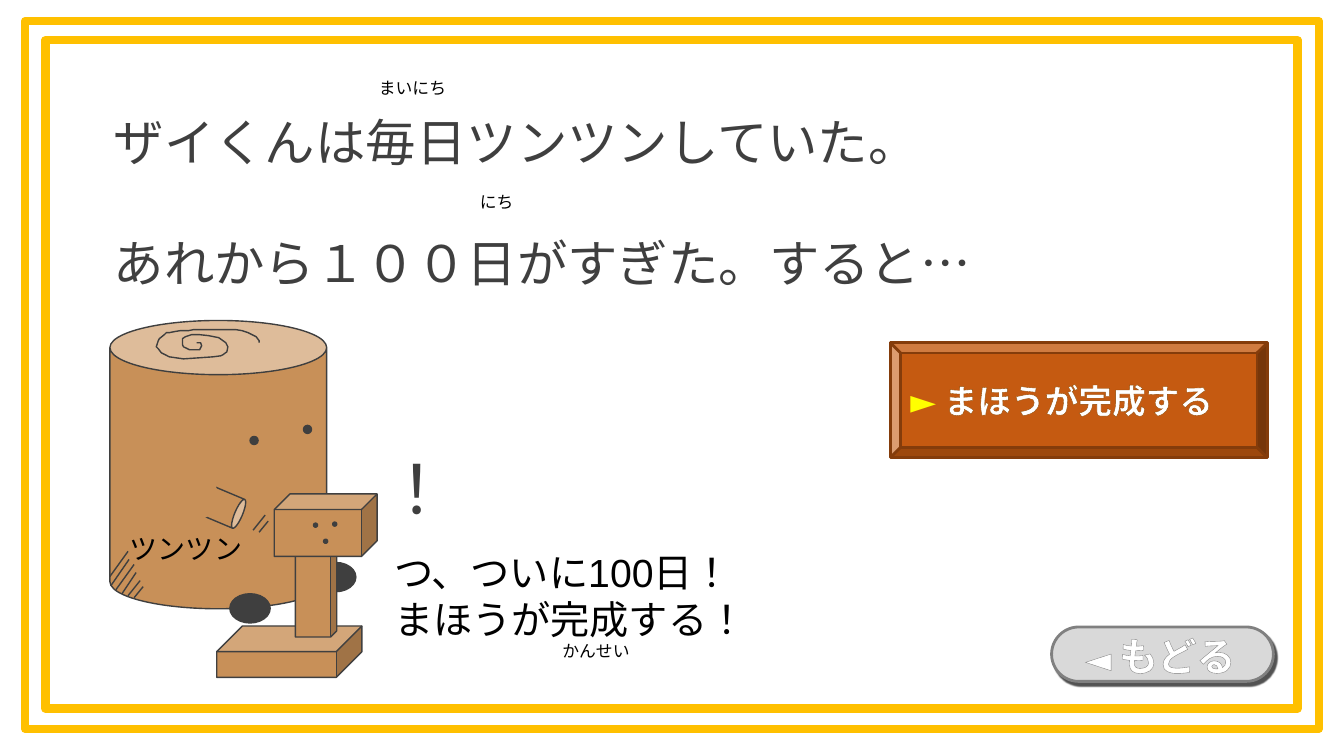
"""Build the storybook slide about Zai-kun reaching day 100."""
from lxml import etree
from pptx import Presentation
from pptx.dml.color import RGBColor
from pptx.enum.lang import MSO_LANGUAGE_ID
from pptx.enum.shapes import MSO_CONNECTOR, MSO_SHAPE
from pptx.enum.text import MSO_ANCHOR, MSO_AUTO_SIZE, PP_ALIGN
from pptx.oxml.ns import qn
from pptx.util import Inches, Pt

RECT, ROUND_RECT = MSO_SHAPE.RECTANGLE, MSO_SHAPE.ROUNDED_RECTANGLE
ELLIPSE, CAN, CUBE, BEVEL = MSO_SHAPE.OVAL, MSO_SHAPE.CAN, MSO_SHAPE.CUBE, MSO_SHAPE.BEVEL
STRAIGHT = MSO_CONNECTOR.STRAIGHT
LEFT, CENTER = PP_ALIGN.LEFT, PP_ALIGN.CENTER
MIDDLE = MSO_ANCHOR.MIDDLE
FIT_SHAPE = MSO_AUTO_SIZE.SHAPE_TO_FIT_TEXT
JAPANESE = MSO_LANGUAGE_ID.JAPANESE

BLACK = RGBColor(0x00, 0x00, 0x00)
WHITE = RGBColor(0xFF, 0xFF, 0xFF)
YELLOW = RGBColor(0xFF, 0xFF, 0x00)
GOLD = RGBColor(0xFF, 0xC0, 0x00)
DARK = RGBColor(0x3F, 0x3F, 0x3F)
EDGE = RGBColor(0x40, 0x40, 0x40)
WOOD = RGBColor(0xC8, 0x90, 0x58)
BRICK = RGBColor(0xC5, 0x5A, 0x11)
BRICK_EDGE = RGBColor(0x84, 0x3C, 0x0B)
BRICK_OUTLINE = RGBColor(0x8E, 0x47, 0x00)
SILVER = RGBColor(0xD9, 0xD9, 0xD9)
GRAY = RGBColor(0x80, 0x80, 0x80)

LATIN_FONT, JAPANESE_FONT = "Arial", "Noto Sans CJK JP"

HATCHING = [
    (1.27, 5.47, 1.09, 5.72), (1.28, 5.55, 1.1, 5.81), (1.33, 5.6, 1.15, 5.85),
    (1.35, 5.68, 1.21, 5.89), (1.39, 5.76, 1.27, 5.91), (1.42, 5.82, 1.33, 5.93),
]
POKE_MARKS = [(2.63, 5.11, 2.51, 5.26), (2.66, 5.17, 2.57, 5.28)]
TREE_RING = [
    (1.95, 3.4), (1.99, 3.4), (2, 3.43), (1.98, 3.47), (1.88, 3.47), (1.82, 3.44),
    (1.81, 3.42), (1.81, 3.36), (1.84, 3.34), (1.9, 3.32), (1.98, 3.32), (2.07, 3.33),
    (2.17, 3.35), (2.24, 3.4), (2.26, 3.44), (2.25, 3.49), (2.21, 3.52), (2.19, 3.53),
    (2.11, 3.54), (1.97, 3.55), (1.82, 3.56), (1.68, 3.54), (1.62, 3.51), (1.6, 3.5),
    (1.57, 3.46), (1.55, 3.44), (1.57, 3.38), (1.58, 3.36), (1.63, 3.32), (1.65, 3.3),
    (1.68, 3.3), (1.73, 3.29), (1.79, 3.28), (1.87, 3.28), (1.92, 3.27), (2.06, 3.27),
    (2.34, 3.27), (2.4, 3.28), (2.46, 3.3), (2.48, 3.31), (2.54, 3.34), (2.57, 3.38),
    (2.57, 3.4),
]


class StorySlide:
    """Draw styled elements on one slide."""

    def __init__(self, prs):
        self.s = prs.slides.add_slide(prs.slide_layouts[6])
        self.target = self.s.shapes

    def group(self):
        self.target = self.s.shapes.add_group_shape().shapes

    def ungroup(self):
        self.target = self.s.shapes

    def paint(self, sp, fill, line, width):
        sp.shadow.inherit = False
        if fill is None:
            sp.fill.background()
        else:
            sp.fill.solid()
            sp.fill.fore_color.rgb = fill
        if line is None:
            sp.line.fill.background()
        else:
            sp.line.color.rgb = line
            sp.line.width = Pt(width)

    def shape(self, kind, box, fill=None, line=None, width=1, adj=None, rotation=0):
        sp = self.target.add_shape(kind, *map(Inches, box))
        self.paint(sp, fill, line, width)
        if adj is not None:
            sp.adjustments[0] = adj
        sp.rotation = rotation
        return sp

    def dot(self, left, top, width, height, rotation=0):
        self.shape(ELLIPSE, (left, top, width, height), DARK, DARK, rotation=rotation)

    def line(self, *ends):
        cxn = self.target.add_connector(STRAIGHT, *map(Inches, ends))
        cxn.line.color.rgb = DARK
        cxn.line.width = Pt(1)
        etree.SubElement(cxn._element.spPr, qn("a:effectLst"))

    def curve(self, points):
        start, *rest = [(Inches(x), Inches(y)) for x, y in points]
        builder = self.target.build_freeform(*start)
        builder.add_line_segments(rest, close=False)
        self.paint(builder.convert_to_shape(), None, DARK, 1)

    def style(self, r, size, color, font=LATIN_FONT, bold=False):
        r.font.size = Pt(size)
        r.font.name = font
        r.font.bold = bold
        r.font.color.rgb = color
        r.font.language_id = JAPANESE
        ea = etree.Element(qn("a:ea"), typeface=JAPANESE_FONT)
        r.font._element.find(qn("a:latin")).addnext(ea)

    def text(self, box, lines, size, color=BLACK, spacing=None):
        tf = self.target.add_textbox(*map(Inches, box)).text_frame
        tf.word_wrap = True
        tf.auto_size = FIT_SHAPE
        tf.text = "\n".join(lines)
        for p in tf.paragraphs:
            p.line_spacing = spacing
            for r in p.runs:
                self.style(r, size, color)

    def label(self, sp, runs, align):
        """Fill a button with bold outlined runs."""
        tf = sp.text_frame
        tf.word_wrap = True
        p = tf.paragraphs[0]
        p.alignment = align
        for text, size, color, outline, width in runs:
            r = p.add_run()
            r.text = text
            self.style(r, size, color, JAPANESE_FONT, True)
            ln = etree.Element(qn("a:ln"), w=str(Pt(width)))
            fill = etree.SubElement(ln, qn("a:solidFill"))
            etree.SubElement(fill, qn("a:srgbClr"), val=str(outline))
            r.font._element.insert(0, ln)
        return tf

    def drop_shadow(self, sp):
        effects = sp._element.spPr.find(qn("a:effectLst"))
        shadow = etree.SubElement(effects, qn("a:outerShdw"), blurRad=str(Pt(1)),
                                  dist=str(Pt(3)), dir="3000000", algn="tl", rotWithShape="0")
        color = etree.SubElement(shadow, qn("a:srgbClr"), val=str(BLACK))
        etree.SubElement(color, qn("a:alpha"), val="68000")


def draw_log(page):
    page.group()
    page.dot(3.13, 5.58, 0.4, 0.29)
    page.shape(CAN, (1.09, 3.18, 2.15, 2.86), WOOD, DARK, adj=0.25)
    for left, top in [(2.48, 4.33), (3.01, 4.22), (2.84, 5.01)]:
        page.dot(left, top, 0.08, 0.08)
    page.dot(2.28, 5.89, 0.4, 0.29)
    for ends in HATCHING:
        page.line(*ends)
    page.curve(TREE_RING)
    page.shape(CAN, (2.04, 4.8, 0.31, 0.45), WOOD, DARK, adj=0.25, rotation=112.8)
    page.shape(ELLIPSE, (1.81, 4.83, 0.41, 0.26), WOOD, rotation=110.8)
    for ends in POKE_MARKS:
        page.line(*ends)
    page.ungroup()


def draw_zai(page):
    page.group()
    for box, depth in [((2.15, 6.21, 1.44, 0.51), 0.5), ((2.93, 5.11, 0.41, 1.21), 0.15),
                       ((2.72, 4.9, 1.02, 0.62), 0.25)]:
        page.shape(CUBE, box, WOOD, EDGE, adj=depth)
    for left, top in [(3.3, 5.18), (3.11, 5.19), (3.21, 5.35)]:
        page.dot(left, top, 0.04, 0.04, 356.6)
    page.ungroup()


def main():
    prs = Presentation()
    prs.slide_width, prs.slide_height = Inches(13.33), Inches(7.5)
    page = StorySlide(prs)
    for frame in [(0.25, 0.21, 12.83, 7.02), (0.45, 0.4, 12.42, 6.63)]:
        page.shape(RECT, frame, line=GOLD, width=6)
    page.text((1.03, 0.45, 11.54, 2.52),
              ["ザイくんは毎日ツンツンしていた。", "あれから１００日がすぎた。すると…"], 36, DARK, 2.0)
    draw_log(page)
    page.text((1.19, 5.22, 3.1, 0.44), ["ツンツン"], 20)
    draw_zai(page)

    button = page.shape(BEVEL, (8.83, 3.4, 3.74, 1.14), BRICK, BRICK_EDGE, 2, 0.09)
    tf = page.label(button, [("►", 24, YELLOW, BRICK_OUTLINE, 1),
                             (" まほうが完成する", 24, WHITE, BRICK_OUTLINE, 1)], LEFT)
    tf.vertical_anchor = MIDDLE

    page.text((3.81, 5.39, 4.09, 1.04), ["つ、ついに100日！", "まほうが完成する！"], 28)
    page.text((3.71, 3.99, 0.95, 1.31), ["！"], 48, DARK, 1.5)
    for left, top, width, reading in [(3.66, 0.72, 1.08, "まいにち"), (4.66, 1.85, 0.82, "にち"),
                                      (5.48, 6.31, 1.08, "かんせい")]:
        page.text((left, top, width, 0.3), [reading], 12)

    back = page.shape(ROUND_RECT, (10.43, 6.22, 2.2, 0.54), SILVER, GRAY, 2, 0.5)
    page.drop_shadow(back)
    caption = page.s.shapes.add_textbox(*map(Inches, (10.41, 6.22, 2.2, 0.57)))
    tf = page.label(caption, [("◄ ", 24, WHITE, GRAY, 1), ("もどる", 28, WHITE, GRAY, 1.5)], CENTER)
    tf.auto_size = FIT_SHAPE
    prs.save("out.pptx")


if __name__ == "__main__":
    main()
